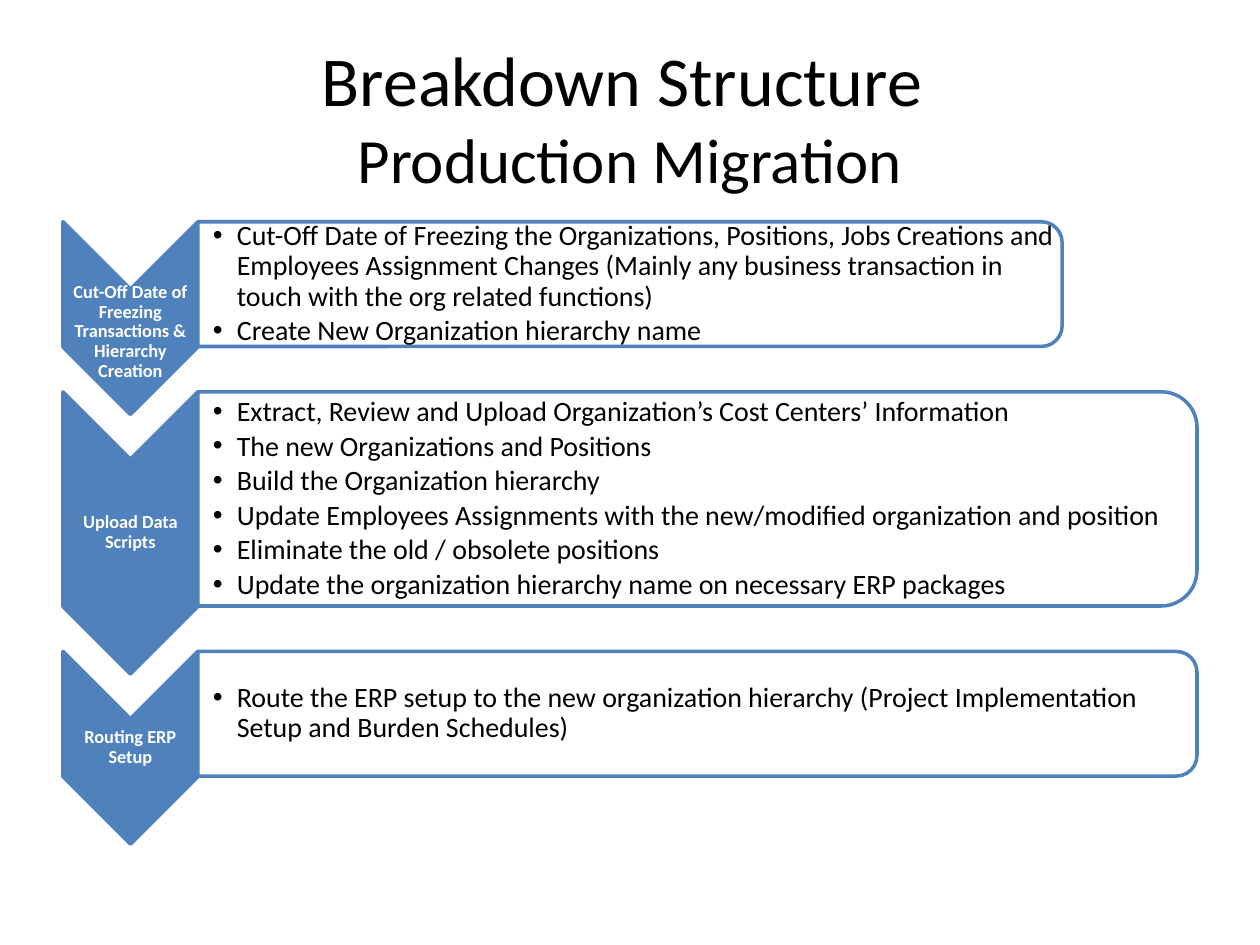
from dataclasses import dataclass

from lxml.etree import SubElement
from pptx import Presentation
from pptx.dml.color import RGBColor
from pptx.enum.shapes import MSO_SHAPE
from pptx.enum.text import MSO_ANCHOR, PP_ALIGN
from pptx.oxml.ns import qn
from pptx.util import Inches, Pt


@dataclass(frozen=True)
class Theme:
    font: str = "Calibri"
    blue: RGBColor = RGBColor(0x4F, 0x81, 0xBD)
    white: RGBColor = RGBColor(0xFF, 0xFF, 0xFF)
    black: RGBColor = RGBColor(0, 0, 0)
    title: float = 40
    second: float = 36
    label: float = 10.5
    body: float = 16
    line: float = 2


@dataclass(frozen=True)
class Step:
    label: str
    items: tuple[str, ...]
    width: float = 7.93
    height: float = 0.99
    drop: float = 0  # label offset below the middle of the chevron


@dataclass(frozen=True)
class Box:
    left: float
    top: float
    width: float
    height: float

    def args(self):
        return [Inches(v) for v in (self.left, self.top, self.width, self.height)]

    def turned(self):
        """The frame that covers this box once it is rotated by 90 degrees."""
        shift = (self.width - self.height) / 2
        return Box(self.left + shift, self.top - shift, self.height, self.width)


THEME = Theme()
LEFT, TOP, GAP = 0.5, 1.76, 0.36
ARROW, POINT = 1.07, 0.54
STEPS = (
    Step("Cut-Off Date of Freezing Transactions & Hierarchy Creation", (
        "Cut-Off Date of Freezing the Organizations, Positions, Jobs Creations and "
        "Employees Assignment Changes (Mainly any business transaction in touch "
        "with the org related functions)",
        "Create New Organization hierarchy name",
    ), width=6.86, drop=0.11),
    Step("Upload Data Scripts", (
        "Extract, Review and Upload Organization’s Cost Centers’ Information",
        "The new Organizations and Positions",
        "Build the Organization hierarchy",
        "Update Employees Assignments with the new/modified organization and position",
        "Eliminate the old / obsolete positions",
        "Update the organization hierarchy name on necessary ERP packages",
    ), height=1.7),
    Step("Routing ERP Setup", (
        "Route the ERP setup to the new organization hierarchy "
        "(Project Implementation Setup and Burden Schedules)",
    )),
)


def apply(target, values: dict) -> None:
    for name, value in values.items():
        setattr(target, name, value)


def add_run(para, text: str, size: float, color: RGBColor, bold: bool = False) -> None:
    run = para.add_run()
    run.text = text
    apply(run.font, {"name": THEME.font, "size": Pt(size), "bold": bold})
    run.font.color.rgb = color


def add_frame(slide, box: Box, **insets: float):
    frame = slide.shapes.add_textbox(*box.args()).text_frame
    apply(frame, {"word_wrap": True, "vertical_anchor": MSO_ANCHOR.MIDDLE})
    apply(frame, {f"margin_{side}": Inches(v) for side, v in insets.items()})
    return frame


def add_turned(slide, kind: MSO_SHAPE, box: Box, fill: RGBColor):
    shape = slide.shapes.add_shape(kind, *box.turned().args())
    shape.rotation = 90
    shape.shadow.inherit = False
    shape.fill.solid()
    shape.fill.fore_color.rgb = fill
    shape.line.color.rgb = THEME.blue
    shape.line.width = Pt(THEME.line)
    return shape


def add_bullet(para) -> None:
    props = para._p.get_or_add_pPr()
    props.set("marL", str(Inches(0.19)))
    props.set("indent", str(-Inches(0.19)))
    SubElement(props, qn("a:buFont"), typeface="Arial")
    SubElement(props, qn("a:buChar"), char="•")


def add_title(slide) -> None:
    para = add_frame(slide, Box(0.5, 0.3, 9, 1.25)).paragraphs[0]
    para.alignment = PP_ALIGN.CENTER
    add_run(para, "Breakdown Structure ", THEME.title, THEME.black)
    para.add_line_break()
    add_run(para, "Production Migration", THEME.second, THEME.black)


def add_label(slide, step: Step, top: float) -> None:
    box = Box(LEFT, top + ARROW / 2 + step.drop, ARROW, step.height + POINT - ARROW)
    frame = add_frame(slide, box, left=0.01, top=0.01, right=0.01, bottom=0.01)
    para = frame.paragraphs[0]
    apply(para, {"alignment": PP_ALIGN.CENTER, "line_spacing": 0.9})
    add_run(para, step.label, THEME.label, THEME.white, bold=True)


def add_items(slide, step: Step, top: float) -> None:
    left, inset = LEFT + ARROW, 0.05 * step.height
    box = Box(left, top + inset, step.width - inset, step.height - 2 * inset)
    frame = add_frame(slide, box, left=0.12, top=0.01, right=0.01, bottom=0.01)
    for i, item in enumerate(step.items):
        para = frame.add_paragraph() if i else frame.paragraphs[0]
        add_bullet(para)
        apply(para, {"level": 1, "line_spacing": 0.9, "space_after": Pt(2.5)})
        add_run(para, item, THEME.body, THEME.black)


def add_step(slide, step: Step, top: float) -> None:
    arrow = Box(LEFT, top, ARROW, step.height + POINT)
    add_turned(slide, MSO_SHAPE.CHEVRON, arrow, THEME.blue)
    add_label(slide, step, top)
    panel = Box(LEFT + ARROW, top, step.width, step.height)
    shape = add_turned(slide, MSO_SHAPE.ROUND_2_SAME_RECTANGLE, panel, THEME.white)
    color = shape.fill._xPr.find(f"{qn('a:solidFill')}/{qn('a:srgbClr')}")
    SubElement(color, qn("a:alpha"), val="90000")
    add_items(slide, step, top)


def main() -> None:
    deck = Presentation()
    apply(deck, {"slide_width": Inches(10), "slide_height": Inches(7.5)})
    slide = deck.slides.add_slide(deck.slide_layouts[6])
    add_title(slide)
    top = TOP
    for step in STEPS:
        add_step(slide, step, top)
        top += step.height + GAP
    deck.save("out.pptx")


if __name__ == "__main__":
    main()
